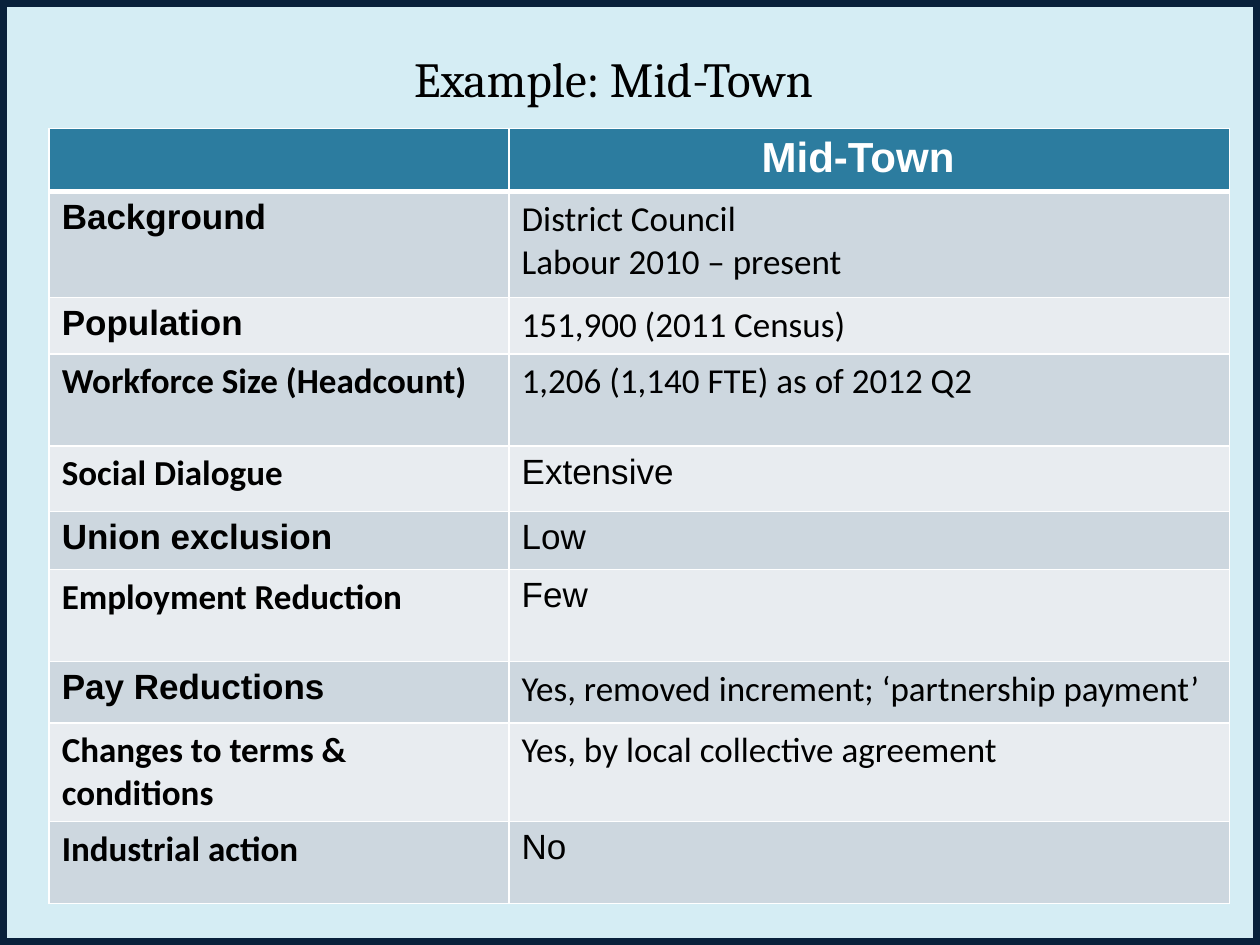
import pptx
import pptx.dml.color
import pptx.enum.shapes
import pptx.enum.text
import pptx.oxml
import pptx.oxml.ns
import pptx.util

Inches = pptx.util.Inches
Pt = pptx.util.Pt
RGBColor = pptx.dml.color.RGBColor
PP_ALIGN = pptx.enum.text.PP_ALIGN

PALE_BLUE = RGBColor(0xD5, 0xED, 0xF4)
NAVY = RGBColor(0x09, 0x21, 0x3B)
TEAL = RGBColor(0x2C, 0x7C, 0x9F)
BAND_DARK = RGBColor(0xCD, 0xD7, 0xDF)
BAND_LIGHT = RGBColor(0xE8, 0xEC, 0xF0)
BLACK = RGBColor(0, 0, 0)
WHITE = RGBColor(0xFF, 0xFF, 0xFF)

COLUMN_WIDTHS = [3.65, 5.72]
HEADER = "Mid-Town"
HEADER_HEIGHT = 0.49
# Row height, label, label font, value, value font
ROWS = [
    (0.84, "Background", "Arial", "District Council\nLabour 2010 – present", "Calibri"),
    (0.45, "Population", "Arial", "151,900 (2011 Census)", "Calibri"),
    (0.73, "Workforce Size (Headcount)", "Calibri", "1,206 (1,140 FTE) as of 2012 Q2", "Calibri"),
    (0.52, "Social Dialogue", "Calibri", "Extensive", "Arial"),
    (0.46, "Union exclusion", "Arial", "Low", "Arial"),
    (0.73, "Employment Reduction", "Calibri", "Few", "Arial"),
    (0.49, "Pay Reductions", "Arial", "Yes, removed increment; ‘partnership payment’", "Calibri"),
    (0.78, "Changes to terms & conditions", "Calibri", "Yes, by local collective agreement", "Calibri"),
    (0.65, "Industrial action", "Calibri", "No", "Arial"),
]


def style_paragraph(paragraph, font_name, size, color, bold=False, alignment=PP_ALIGN.LEFT):
    paragraph.alignment = alignment
    font = paragraph.font
    font.name, font.size, font.bold = font_name, Pt(size), bold
    font.color.rgb = color


def set_borders(cell, top=1, bottom=1):
    """Draw white cell borders; widths are in points."""
    properties = cell._tc.get_or_add_tcPr()
    sides = [("lnL", 1), ("lnR", 1), ("lnT", top), ("lnB", bottom)]
    for position, (side, width) in enumerate(sides):
        properties.insert(position, pptx.oxml.parse_xml(
            f'<a:{side} {pptx.oxml.ns.nsdecls("a")} w="{Pt(width)}">'
            f'<a:solidFill><a:srgbClr val="{WHITE}"/></a:solidFill></a:{side}>'))


def fill_cell(cell, text, fill, **text_style):
    cell.text = text
    cell.fill.solid()
    cell.fill.fore_color.rgb = fill
    for paragraph in cell.text_frame.paragraphs:
        style_paragraph(paragraph, **text_style)


def add_frame(slide, left, top, width, height):
    frame = slide.shapes.add_shape(
        pptx.enum.shapes.MSO_SHAPE.RECTANGLE, left, top, width, height)
    frame.shadow.inherit = False
    frame.fill.background()
    frame.line.color.rgb = NAVY
    frame.line.width = Pt(8)


def add_title(slide, left, top, width, height):
    text_frame = slide.shapes.add_textbox(left, top, width, height).text_frame
    text_frame.word_wrap = True
    text_frame.vertical_anchor = pptx.enum.text.MSO_ANCHOR.MIDDLE
    text_frame.text = "Example: Mid-Town"
    style_paragraph(text_frame.paragraphs[0], "Cambria", 28, BLACK,
                    alignment=PP_ALIGN.CENTER)


def add_profile_table(slide, left, top, width, height):
    table = slide.shapes.add_table(
        len(ROWS) + 1, len(COLUMN_WIDTHS), left, top, width, height).table
    for column, column_width in zip(table.columns, COLUMN_WIDTHS):
        column.width = Inches(column_width)

    # Header row, with a thick rule beneath
    table.rows[0].height = Inches(HEADER_HEIGHT)
    for cell, text in zip(table.rows[0].cells, ["", HEADER]):
        fill_cell(cell, text, TEAL, font_name="Arial", size=24, color=WHITE,
                  bold=True, alignment=PP_ALIGN.CENTER)
        set_borders(cell, bottom=3)
    table.cell(0, 1).margin_right = Inches(0.28)

    # Banded body rows
    for index, (row_height, label, label_font, value, value_font) in enumerate(ROWS, 1):
        row = table.rows[index]
        row.height = Inches(row_height)
        fill = BAND_DARK if index % 2 else BAND_LIGHT
        label_cell, value_cell = row.cells
        fill_cell(label_cell, label, fill, font_name=label_font, size=20,
                  color=BLACK, bold=True)
        fill_cell(value_cell, value, fill, font_name=value_font, size=20, color=BLACK)
        for cell in (label_cell, value_cell):
            set_borders(cell, top=3 if index == 1 else 1)


def main():
    presentation = pptx.Presentation()
    presentation.slide_width = Inches(10)
    presentation.slide_height = Inches(7.5)
    slide = presentation.slides.add_slide(presentation.slide_layouts[6])
    slide.background.fill.solid()
    slide.background.fill.fore_color.rgb = PALE_BLUE

    add_frame(slide, 0, 0, presentation.slide_width, presentation.slide_height)
    add_title(slide, Inches(0.37), Inches(0.23), Inches(9), Inches(0.77))
    add_profile_table(slide, Inches(0.39), Inches(1.02), Inches(9.37), Inches(6.14))
    presentation.save("out.pptx")


if __name__ == "__main__":
    main()
